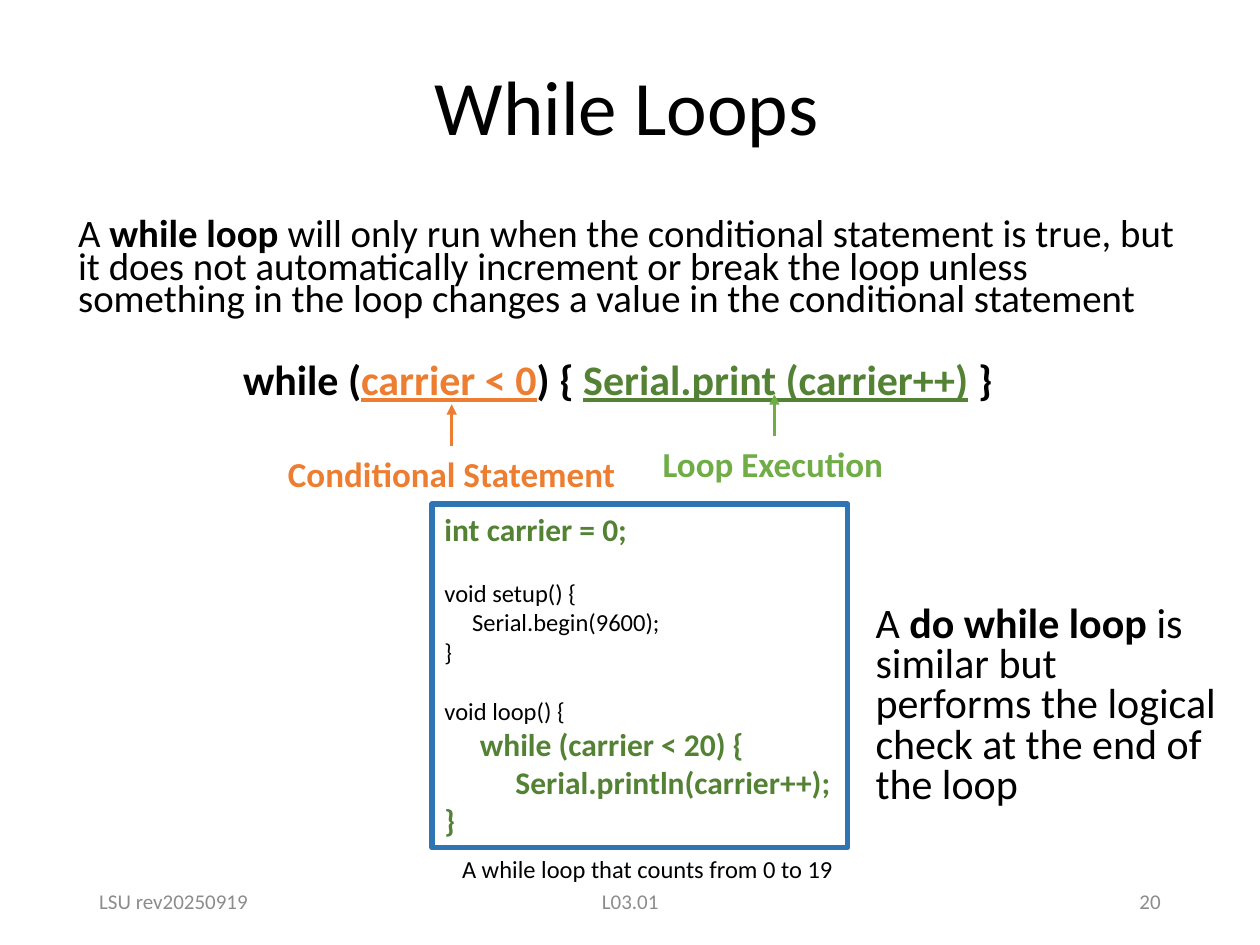
"""Build the While Loops slide."""
from typing import NamedTuple, Optional

from lxml import etree
from pptx import Presentation
from pptx.dml.color import RGBColor
from pptx.enum import shapes, text
from pptx.oxml import ns
from pptx.util import Cm, Pt

COLORS = {"black": "000000", "orange": "ED7D31", "green": "70AD47",
          "code": "548235", "blue": "2E75B6", "gray": "8C8C8C"}
LEFT, CENTER, RIGHT = text.PP_ALIGN.LEFT, text.PP_ALIGN.CENTER, text.PP_ALIGN.RIGHT
TOP, MIDDLE = text.MSO_ANCHOR.TOP, text.MSO_ANCHOR.MIDDLE


class Box(NamedTuple):
    left: float
    top: float
    width: float
    height: float


class Run(NamedTuple):
    words: str
    size: float
    color: str = "black"
    bold: bool = False
    underline: bool = False


class Para(NamedTuple):
    runs: list[Run]
    align: text.PP_ALIGN = LEFT
    spacing: Optional[float] = None
    before: float = 0


class Label(NamedTuple):
    box: Box
    para: Para
    anchor: text.MSO_ANCHOR = TOP
    wrap: bool = True


def rgb(name: str) -> RGBColor:
    return RGBColor.from_string(COLORS[name])


def place(sp, box: Box) -> None:
    sp.left, sp.top, sp.width, sp.height = map(Cm, box)


def write(sp, paras: list[Para], anchor=TOP, wrap: bool = True) -> None:
    tf = sp.text_frame
    tf.word_wrap, tf.vertical_anchor = wrap, anchor
    tf.auto_size = text.MSO_AUTO_SIZE.NONE
    for i, para in enumerate(paras):
        p = tf.add_paragraph() if i else tf.paragraphs[0]
        p.alignment, p.space_before = para.align, Pt(para.before)
        if para.spacing:
            p.line_spacing = para.spacing
        for run in para.runs:
            r = p.add_run()
            r.text = run.words
            r.font.name, r.font.size = "Calibri", Pt(run.size)
            r.font.bold, r.font.underline = run.bold, run.underline
            r.font.color.rgb = rgb(run.color)


def add_label(s, label: Label):
    sp = s.shapes.add_textbox(*map(Cm, label.box))
    write(sp, [label.para], label.anchor, label.wrap)
    return sp


def add_arrow_up(s, sp, color: str) -> None:
    x = sp.left + sp.width // 2
    line = s.shapes.add_connector(shapes.MSO_CONNECTOR.STRAIGHT,
                                  x, sp.top, x, sp.top - Cm(0.84))
    line.begin_connect(sp, 0)
    line.line.color.rgb, line.line.width = rgb(color), Pt(1.5)
    etree.SubElement(line.line._get_or_add_ln(), ns.qn("a:tailEnd"), type="triangle")
    etree.SubElement(line._element.spPr, ns.qn("a:effectLst"))


def code_para(words: str, strong: bool = False, gap: bool = False) -> Para:
    run = Run(words, 18, "code", True) if strong else Run(words, 14)
    return Para([run], before=17 if gap else 0)


def footer(left: float, width: float, words: str, align) -> Label:
    return Label(Box(left, 17.65, width, 1.02),
                 Para([Run(words, 12, "gray")], align), MIDDLE)


BODY = Para([
    Run("A ", 22.2), Run("while loop ", 22.2, bold=True),
    Run("will only run when the conditional statement is true, but it does not "
        "automatically increment or break the loop unless something in the loop "
        "changes a value in the conditional statement", 22.2)], spacing=0.7)

CODE = [
    code_para("int carrier = 0;", strong=True),
    code_para("void setup() {", gap=True),
    code_para("     Serial.begin(9600);"),
    code_para("}"),
    code_para("void loop() {", gap=True),
    code_para("     while (carrier < 20) {", strong=True),
    code_para("          Serial.println(carrier++);", strong=True),
    code_para("}", strong=True)]

LABELS = [
    Label(Box(8.71, 17.09, 8.69, 0.86),
          Para([Run("A while loop that counts from 0 to 19", 14)], CENTER)),
    Label(Box(4.65, 7.01, 15.67, 1.27), Para([
        Run("while (", 24, bold=True),
        Run("carrier < 0", 24, "orange", True, True),
        Run(") { ", 24, bold=True),
        Run("Serial.print (carrier++)", 24, "code", True, True),
        Run(" }", 24, bold=True)])),
    Label(Box(17.4, 12.09, 7.37, 4.57), Para([
        Run("A ", 24), Run("do while loop ", 24, bold=True),
        Run("is similar but performs the logical check at the end of the loop", 24)],
        spacing=0.8)),
    footer(1.75, 5.72, "LSU rev20250919", LEFT),
    footer(8.41, 8.59, "L03.01", CENTER),
    footer(17.93, 5.72, "20", RIGHT)]

CALLOUTS = [
    Label(Box(5.51, 8.99, 7.19, 1.12),
          Para([Run("Conditional Statement", 20, "orange", True)], CENTER)),
    Label(Box(13.11, 8.79, 5, 1.12),
          Para([Run("Loop Execution", 20, "green", True)]), wrap=False)]


def main() -> None:
    prs = Presentation()
    prs.slide_width, prs.slide_height = Cm(25.4), Cm(19.05)
    s = prs.slides.add_slide(prs.slide_layouts[1])

    title, body = s.shapes.title, s.placeholders[1]
    place(title, Box(4.47, 0.38, 16.33, 3.68))
    write(title, [Para([Run("While Loops", 44)], CENTER, 0.9)], MIDDLE)
    place(body, Box(1.32, 4.34, 22.66, 2.34))
    pPr = body.text_frame.paragraphs[0]._p.get_or_add_pPr()
    pPr.set("marL", "0")
    pPr.set("indent", "0")
    etree.SubElement(pPr, ns.qn("a:buNone"))
    write(body, [BODY])

    code = s.shapes.add_shape(shapes.MSO_SHAPE.RECTANGLE,
                              *map(Cm, Box(8.71, 10.16, 8.38, 6.93)))
    code.shadow.inherit = False
    code.fill.background()
    code.line.color.rgb, code.line.width = rgb("blue"), Pt(3)
    write(code, CODE, wrap=False)

    for label in LABELS:
        add_label(s, label)
    for callout in CALLOUTS:
        add_arrow_up(s, add_label(s, callout), callout.para.runs[0].color)

    prs.save("out.pptx")


if __name__ == "__main__":
    main()
